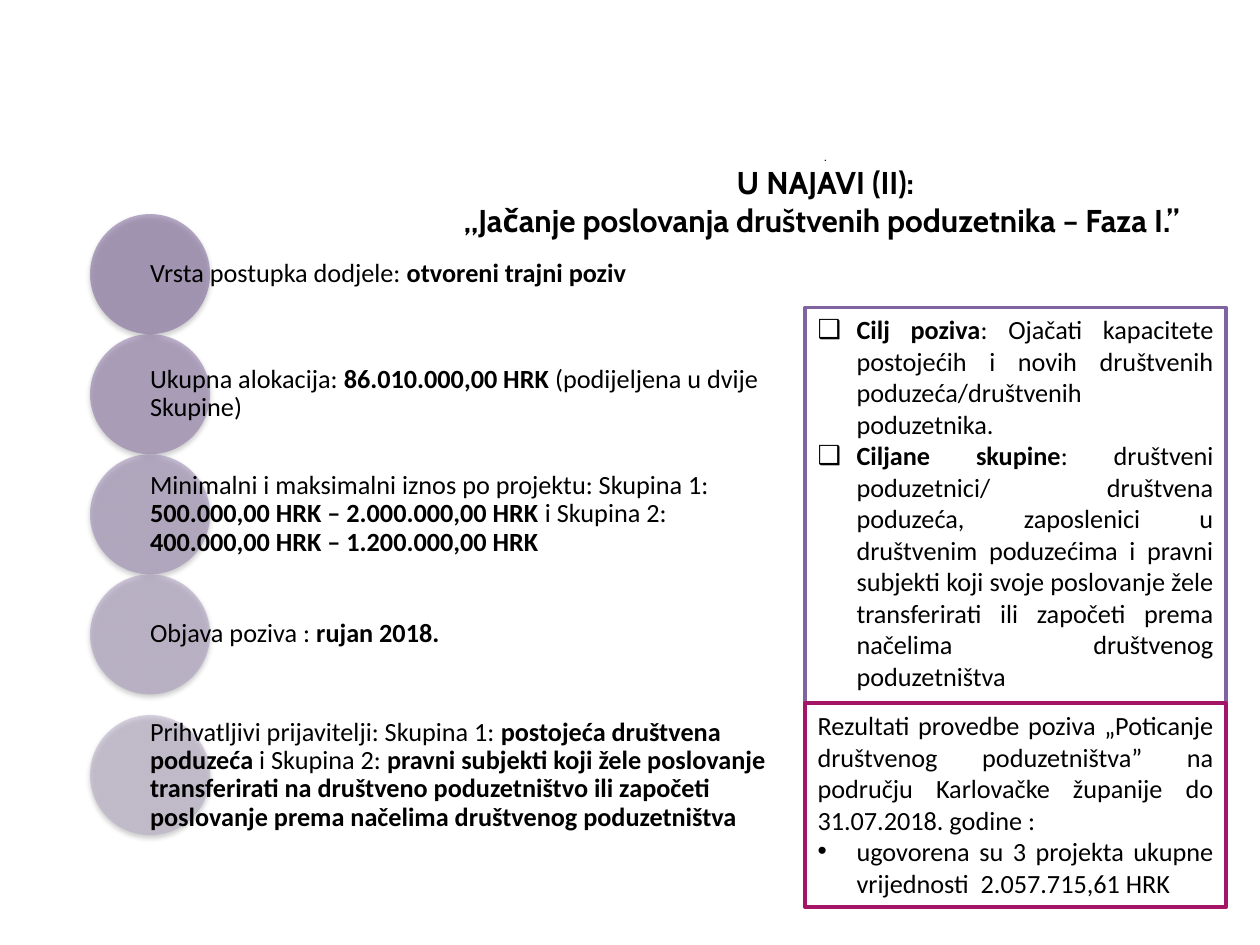
"""Build the slide announcing the call for social entrepreneurs."""
from copy import deepcopy
from dataclasses import dataclass

from lxml import etree
from pptx import Presentation
from pptx.dml.color import RGBColor
from pptx.enum.shapes import MSO_SHAPE
from pptx.enum.text import MSO_ANCHOR, MSO_AUTO_SIZE, PP_ALIGN
from pptx.oxml import parse_xml
from pptx.oxml.ns import nsdecls, qn
from pptx.util import Inches, Pt

OVAL, RECTANGLE = MSO_SHAPE.OVAL, MSO_SHAPE.RECTANGLE
MIDDLE, TOP = MSO_ANCHOR.MIDDLE, MSO_ANCHOR.TOP
CENTER, JUSTIFY = PP_ALIGN.CENTER, PP_ALIGN.JUSTIFY
GROW = MSO_AUTO_SIZE.SHAPE_TO_FIT_TEXT


@dataclass(frozen=True)
class Theme:
    heading_font: str = "Cabin"
    body_font: str = "Calibri"
    dot_size: float = 5.4
    heading_size: float = 18
    body_size: float = 15
    ink: str = "000000"
    paper: str = "FFFFFF"
    goal_border: str = "8064A2"
    result_border: str = "A41568"
    circles: tuple = ("745B93", "846CA2", "9380AD", "A495B9", "B4A9C5")


theme = Theme()
SHADOW = (
    f'<a:effectLst {nsdecls("a")}><a:outerShdw blurRad="{Pt(3.1)}" dist="{Pt(1.6)}" '
    f'dir="5400000" rotWithShape="0"><a:srgbClr val="{theme.ink}">'
    '<a:alpha val="38000"/></a:srgbClr></a:outerShdw></a:effectLst>'
)

prs = Presentation()
prs.slide_width, prs.slide_height = Inches(10), Inches(7.5)
slide = prs.slides.add_slide(prs.slide_layouts[6])
COL, ROW = prs.slide_width / 100, prs.slide_height / 100


def area(left, top, width, height):
    """Turn percentages of the slide into lengths."""
    return [round(n) for n in (left * COL, top * ROW, width * COL, height * ROW)]


def write(paragraph, text, font=theme.body_font, size=theme.body_size, bold=False,
          align=None, bullet=None):
    """Add text whose **marked** parts are bold and whose newlines are line breaks."""
    paragraph.alignment = align
    if bullet:
        props = paragraph._p.get_or_add_pPr()
        props.set("marL", str(Inches(0.31)))
        props.set("indent", str(-Inches(0.31)))
        etree.SubElement(props, qn("a:buFont")).set("typeface", "Arial")
        etree.SubElement(props, qn("a:buChar")).set("char", bullet)
    for part_no, part in enumerate(text.split("**")):
        for line_no, line in enumerate(part.split("\n")):
            if line_no:
                paragraph.add_line_break()
                paragraph._p[-1].append(deepcopy(run._r.rPr))
            if line:
                run = paragraph.add_run()
                run.text = line
                run.font.name, run.font.size = font, Pt(size)
                run.font.bold = bold or part_no % 2 == 1
                run.font.color.rgb = RGBColor.from_string(theme.ink)


title = slide.shapes.add_textbox(*area(34.9, 14.8, 61.2, 11.73)).text_frame
title.word_wrap, title.vertical_anchor = True, MIDDLE
for wording, size in (
    (".\n", theme.dot_size),
    ("U NAJAVI (II):\n„Jačanje poslovanja društvenih poduzetnika – Faza I.” ", theme.heading_size),
):
    write(title.paragraphs[0], wording, font=theme.heading_font, size=size, bold=True, align=CENTER)

facts = (
    "Vrsta postupka dodjele: **otvoreni trajni poziv**",
    "Ukupna alokacija: **86.010.000,00 HRK **(podijeljena u dvije Skupine)",
    "Minimalni i maksimalni iznos po projektu: Skupina 1: **500.000,00 HRK – 2.000.000,00 HRK **"
    "i Skupina 2: **400.000,00 HRK – 1.200.000,00 HRK**",
    "Objava poziva : **rujan 2018.**",
    "Prihvatljivi prijavitelji: Skupina 1: **postojeća društvena poduzeća** i Skupina 2: "
    "**pravni subjekti koji žele poslovanje transferirati na društveno poduzetništvo ili "
    "započeti poslovanje prema načelima društvenog poduzetništva**",
)
CIRCLE_LEFT, CIRCLE_WIDTH, CIRCLE_HEIGHT = 7.14, 9.53, 12.71
LAST_FACT_HEIGHT = 17.07
fact_top = 22.65
for fact, shade in zip(facts, theme.circles):
    fact_height = LAST_FACT_HEIGHT if fact == facts[-1] else CIRCLE_HEIGHT
    circle_top = fact_top + (fact_height - CIRCLE_HEIGHT) / 2
    circle = slide.shapes.add_shape(OVAL, *area(CIRCLE_LEFT, circle_top, CIRCLE_WIDTH, CIRCLE_HEIGHT))
    circle.fill.solid()
    circle.fill.fore_color.rgb = RGBColor.from_string(shade)
    tint = circle._element.spPr.find(".//" + qn("a:srgbClr"))
    etree.SubElement(tint, qn("a:alpha")).set("val", "50000")
    circle.line.fill.background()
    circle._element.spPr.append(parse_xml(SHADOW))

    label = slide.shapes.add_textbox(
        *area(CIRCLE_LEFT + CIRCLE_WIDTH / 2, fact_top, 50.9, fact_height)).text_frame
    label.word_wrap, label.vertical_anchor = True, MIDDLE
    label.margin_left = label.margin_right = 0
    label.margin_top = label.margin_bottom = Inches(0.02)
    write(label.paragraphs[0], fact)
    label.paragraphs[0].line_spacing = 0.9
    label.paragraphs[0].space_after = Pt(0.35 * theme.body_size)
    fact_top += fact_height

panels = (
    (32.53, 41.8, theme.goal_border, (
        ("❑", "**Cilj poziva**: Ojačati kapacitete postojećih i novih društvenih "
              "poduzeća/društvenih poduzetnika."),
        ("❑", "**Ciljane skupine**: društveni poduzetnici/ društvena poduzeća, zaposlenici u "
              "društvenim poduzećima i pravni subjekti koji svoje poslovanje žele transferirati "
              "ili započeti prema načelima društvenog poduzetništva"),
    )),
    (74.4, 21.6, theme.result_border, (
        (None, "Rezultati provedbe poziva „Poticanje društvenog poduzetništva” na području "
               "Karlovačke županije do 31.07.2018. godine :"),
        ("•", "ugovorena su 3 projekta ukupne vrijednosti  2.057.715,61 HRK"),
    )),
)
for panel_top, panel_height, border, entries in panels:
    panel = slide.shapes.add_shape(RECTANGLE, *area(63.9, panel_top, 33.4, panel_height))
    panel.shadow.inherit = False
    panel.fill.solid()
    panel.fill.fore_color.rgb = RGBColor.from_string(theme.paper)
    panel.line.color.rgb = RGBColor.from_string(border)
    panel.line.width = Pt(2)
    body = panel.text_frame
    body.word_wrap, body.vertical_anchor, body.auto_size = True, TOP, GROW
    for entry_no, (bullet, entry) in enumerate(entries):
        paragraph = body.add_paragraph() if entry_no else body.paragraphs[0]
        write(paragraph, entry, align=JUSTIFY, bullet=bullet)

prs.save("out.pptx")
